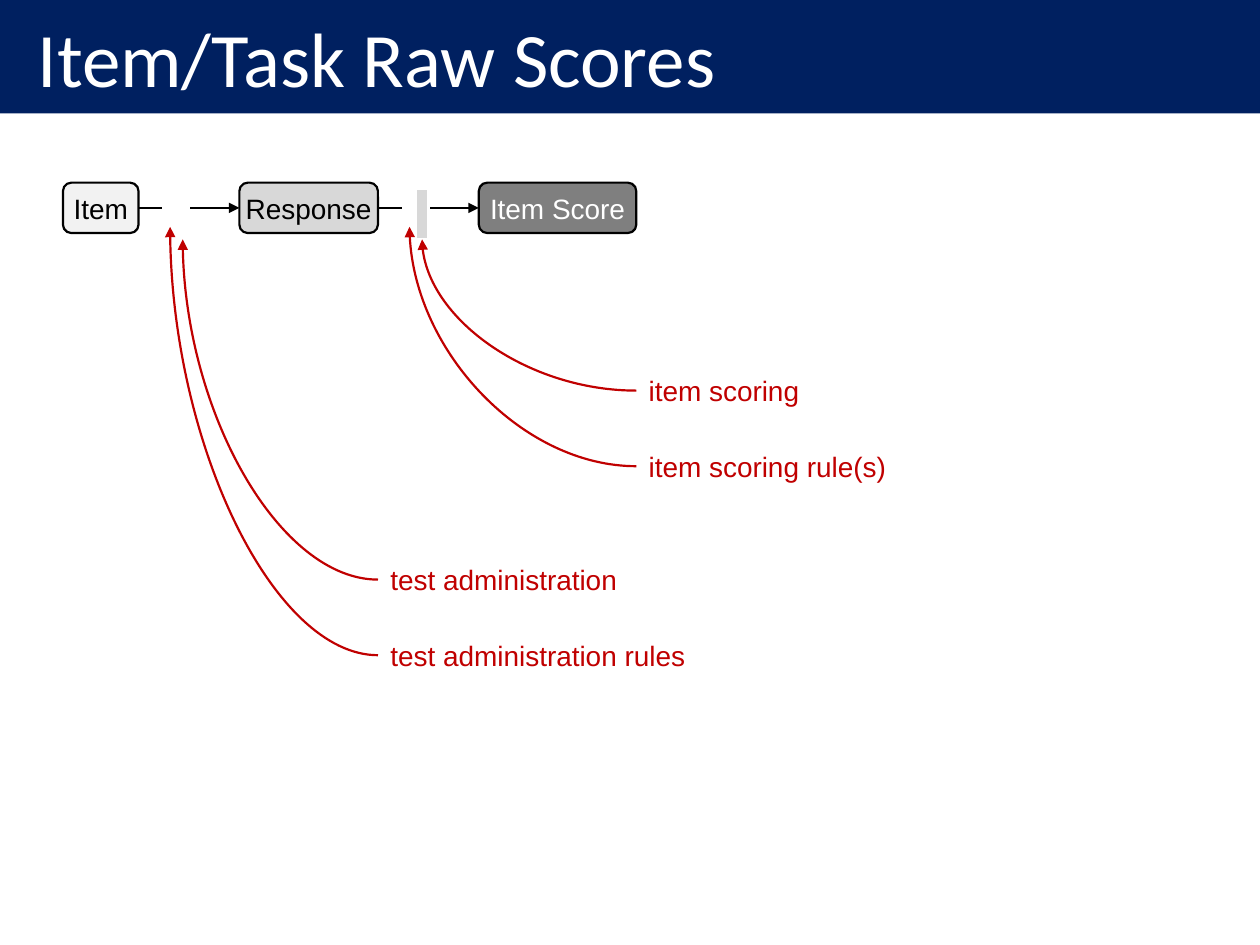
from typing import NamedTuple, Optional

from lxml import etree
from pptx import Presentation, util as u
from pptx.dml.color import RGBColor
from pptx.enum import shapes, text
from pptx.oxml.ns import qn

COLUMNS, ROWS = 200, 150
CELL = u.Inches(0.05)
NAVY, RED, BLACK, WHITE, LIGHT = "002060", "C00000", "000000", "FFFFFF", "D8D8D8"
FLOW_ROW = 33  # centre line of the scoring flow
BOX_ROWS = 8
LINE_WIDTH = 1.25


class Stage(NamedTuple):
    label: str
    column: int
    columns: int
    fill: str
    ink: str


class Gate(NamedTuple):
    """One of the narrow bars that interrupt the flow arrows."""
    column: int
    row: int
    fill: str


class Note(NamedTuple):
    label: str
    column: int
    row: int
    columns: int
    gate: Gate


STAGES = [
    Stage("Item", 10, 12, "F2F2F2", BLACK),
    Stage("Response", 38, 22, LIGHT, BLACK),
    Stage("Item Score", 76, 25, "7F7F7F", WHITE),
]
GATES = [
    Gate(26, 28, WHITE),
    Gate(28, 30, WHITE),
    Gate(64, 28, WHITE),
    Gate(66, 30, LIGHT),
]
NOTES = [
    Note("test administration rules", 60, 104, 55, GATES[0]),
    Note("test administration", 60, 92, 55, GATES[1]),
    Note("item scoring rule(s)", 101, 74, 46, GATES[2]),
    Note("item scoring", 101, 62, 46, GATES[3]),
]


def color(hex_code: str) -> RGBColor:
    return RGBColor.from_string(hex_code)


def paint(shape, fill: Optional[str], outline: Optional[str] = None,
          width: float = LINE_WIDTH) -> None:
    shape.shadow.inherit = False
    if fill:
        shape.fill.solid()
        shape.fill.fore_color.rgb = color(fill)
    else:
        shape.fill.background()
    if outline:
        shape.line.color.rgb = color(outline)
        shape.line.width = u.Pt(width)
    else:
        shape.line.fill.background()


def write(shape, words: str, ink: str, size: int = 16, font: str = "Arial",
          align=text.PP_ALIGN.LEFT, indent: float = 0) -> None:
    frame = shape.text_frame
    frame.word_wrap = True
    frame.auto_size = text.MSO_AUTO_SIZE.NONE
    frame.vertical_anchor = text.MSO_ANCHOR.MIDDLE
    frame.margin_left = u.Inches(indent)
    frame.margin_right = frame.margin_top = frame.margin_bottom = 0
    paragraph = frame.paragraphs[0]
    paragraph.alignment = align
    run = paragraph.add_run()
    run.text = words
    run.font.size, run.font.name = u.Pt(size), font
    run.font.color.rgb = color(ink)


def add_box(slide, kind, column: int, row: int, columns: int, rows: int = BOX_ROWS):
    return slide.shapes.add_shape(
        kind, column * CELL, row * CELL, columns * CELL, rows * CELL)


def add_arrow(slide, kind, start: tuple[int, int], end: tuple[int, int], ink: str):
    arrow = slide.shapes.add_connector(kind, *(cell * CELL for cell in start + end))
    arrow.line.color.rgb = color(ink)
    arrow.line.width = u.Pt(LINE_WIDTH)
    etree.SubElement(arrow.line._get_or_add_ln(), qn("a:tailEnd"), type="triangle")
    etree.SubElement(arrow._element.spPr, qn("a:effectLst"))
    return arrow


def add_title(slide) -> None:
    title = slide.shapes.title
    title.left = title.top = 0
    title.width, title.height = COLUMNS * CELL, 18 * CELL
    title.fill.solid()
    title.fill.fore_color.rgb = color(NAVY)
    write(title, "Item/Task Raw Scores", WHITE, 44, "Calibri", indent=0.3)


def add_stage(slide, stage: Stage) -> None:
    box = add_box(slide, shapes.MSO_SHAPE.ROUNDED_RECTANGLE, stage.column,
                  FLOW_ROW - BOX_ROWS // 2, stage.columns)
    paint(box, stage.fill, BLACK)
    write(box, stage.label, stage.ink, align=text.PP_ALIGN.CENTER)


def add_gate(slide, gate: Gate) -> None:
    bar = add_box(slide, shapes.MSO_SHAPE.FLOWCHART_PROCESS, gate.column, gate.row, 2)
    paint(bar, gate.fill, WHITE, 1.5)


def add_note(slide, note: Note) -> None:
    """Place the note and curve an arrow from it to the foot of its gate."""
    box = add_box(slide, shapes.MSO_SHAPE.FLOWCHART_PROCESS, note.column,
                  note.row - BOX_ROWS // 2, note.columns)
    paint(box, None)
    write(box, note.label, RED, indent=0.1)
    gate_foot = (note.gate.column + 1, note.gate.row + BOX_ROWS)
    curve = add_arrow(slide, shapes.MSO_CONNECTOR.CURVE, gate_foot,
                      (note.column, note.row), RED)
    # A half turn makes the quarter curve start at the note and end at the gate.
    properties = curve._element.spPr
    properties.find(qn("a:prstGeom")).set("prst", "curvedConnector2")
    properties.find(qn("a:xfrm")).set("rot", str(180 * 60000))


def main() -> None:
    deck = Presentation()
    deck.slide_width, deck.slide_height = COLUMNS * CELL, ROWS * CELL
    slide = deck.slides.add_slide(deck.slide_layouts[5])
    add_title(slide)
    for before, after in zip(STAGES, STAGES[1:]):
        add_arrow(slide, shapes.MSO_CONNECTOR.STRAIGHT,
                  (before.column + before.columns, FLOW_ROW),
                  (after.column, FLOW_ROW), BLACK)
    for stage in STAGES:
        add_stage(slide, stage)
    for gate in GATES:
        add_gate(slide, gate)
    for note in NOTES:
        add_note(slide, note)
    deck.save("out.pptx")


if __name__ == "__main__":
    main()
